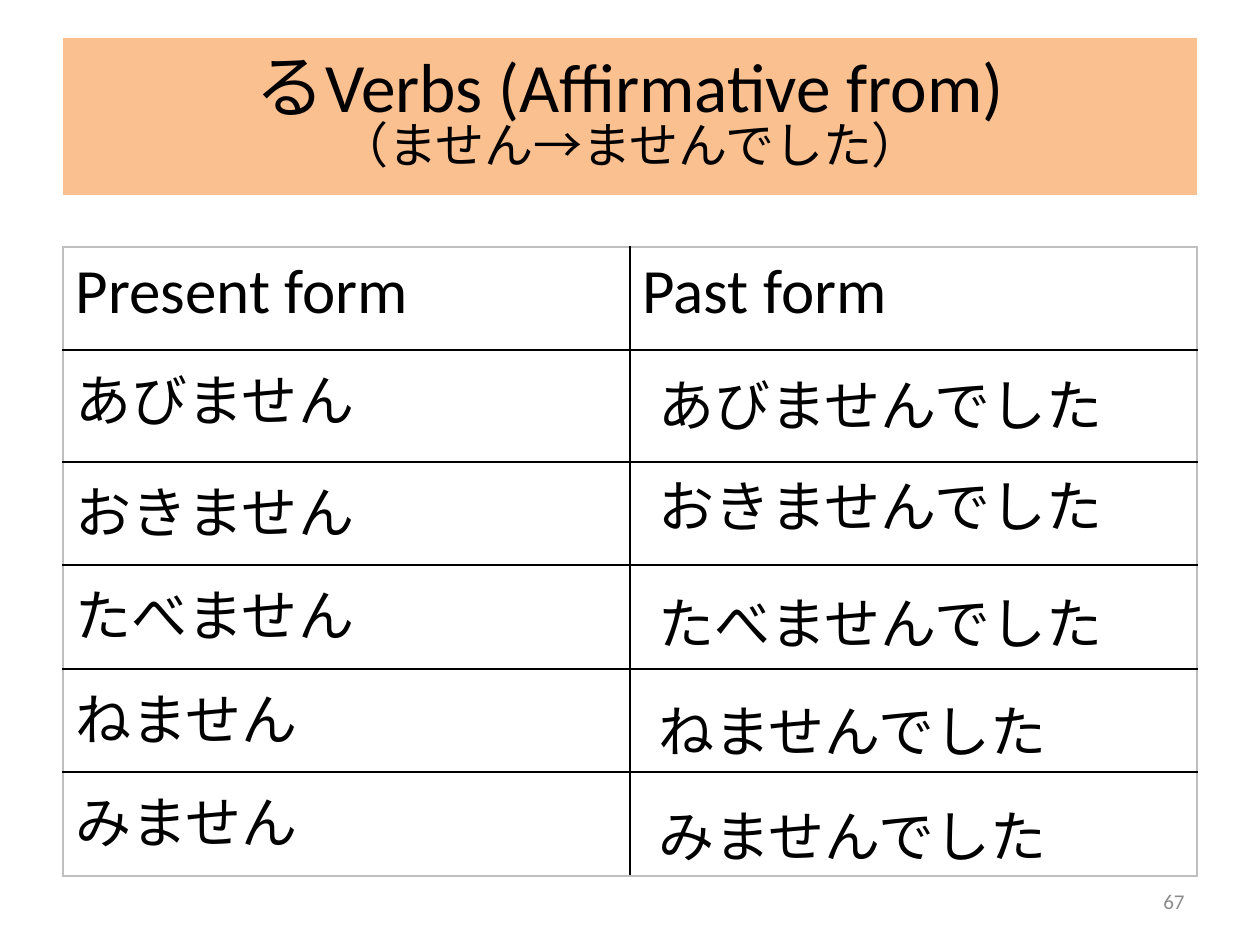
from lxml.etree import SubElement
from pptx import Presentation
from pptx.dml.color import RGBColor
from pptx.enum.text import MSO_ANCHOR as Anchor, MSO_AUTO_SIZE as AutoSize, PP_ALIGN as Align
from pptx.oxml.ns import qn
from pptx.util import Emu, Pt

LATIN, JAPANESE = "Calibri", "Noto Sans CJK JP"
BLACK, GREY, RULE_GREY, PEACH = "000000", "8C8C8C", "BFBFBF", "FAC090"


def px(length):
    return Emu(round(length * 914400 / 126))


def color(hex_code):
    return RGBColor.from_string(hex_code)


class LessonSlide:
    def __init__(self, deck):
        self.slide = deck.slides.add_slide(deck.slide_layouts[5])

    def run(self, paragraph, text, size, font=LATIN, ink=BLACK):
        run = paragraph.add_run()
        run.text = text
        run.font.size = Pt(size)
        run.font.name = font
        run.font.color.rgb = color(ink)
        SubElement(run.font._element, qn("a:ea")).set("typeface", JAPANESE)

    def title(self, box, lines):
        title = self.slide.shapes.title
        title.left, title.top, title.width, title.height = map(px, box)
        title.fill.solid()
        title.fill.fore_color.rgb = color(PEACH)
        frame = title.text_frame
        frame.auto_size = AutoSize.NONE
        frame.vertical_anchor = Anchor.MIDDLE
        heading = frame.paragraphs[0]
        heading.alignment = Align.CENTER
        heading.line_spacing = 0.8
        for index, (text, size) in enumerate(lines):
            if index:
                heading.add_line_break()
            self.run(heading, text, size)

    def text(self, box, text, size, font, ink=BLACK, align=Align.LEFT, anchor=Anchor.TOP):
        frame = self.slide.shapes.add_textbox(*map(px, box)).text_frame
        frame.word_wrap = True
        frame.vertical_anchor = anchor
        frame.paragraphs[0].alignment = align
        self.run(frame.paragraphs[0], text, size, font, ink)

    def border(self, cell, side, ink, width):
        line = SubElement(cell._tc.get_or_add_tcPr(), qn(f"a:{side}"), w=str(Pt(width)))
        fill = SubElement(line, qn("a:solidFill"))
        SubElement(fill, qn("a:srgbClr"), val=ink)

    def table(self, left, top, widths, heights, rows):
        box = map(px, (left, top, sum(widths), sum(heights)))
        table = self.slide.shapes.add_table(len(heights), len(widths), *box).table
        for column, width in zip(table.columns, widths):
            column.width = px(width)
        for r, (height, texts) in enumerate(zip(heights, rows)):
            table.rows[r].height = px(height)
            for c, text in enumerate(texts):
                cell = table.cell(r, c)
                outer = {"lnL": c == 0, "lnR": c == len(widths) - 1,
                         "lnT": r == 0, "lnB": r == len(heights) - 1}
                for side, is_outer in outer.items():
                    self.border(cell, side, RULE_GREY if is_outer else BLACK, 1)
                cell.fill.background()
                if text:
                    size, font = (32, JAPANESE) if r else (36, LATIN)
                    self.run(cell.text_frame.paragraphs[0], text, size, font)


deck = Presentation()
deck.slide_width, deck.slide_height = px(1260), px(945)
lesson = LessonSlide(deck)

# Title band
lesson.title((63, 38, 1134, 157),
             [("るVerbs (Affirmative from)", 39.6), ("（ません→ませんでした）", 28)])

# Page number
lesson.text((903, 876, 294, 50), "67", 12, LATIN, GREY, Align.RIGHT, Anchor.MIDDLE)

# Present forms in the table
stems = ["あび", "おき", "たべ", "ね", "み"]
lesson.table(63, 247, [567, 567], [103, 112, 103, 104, 103, 104],
             [("Present form", "Past form")] + [(stem + "ません", "") for stem in stems])

# Past forms laid over the right column
for stem, top in zip(stems, [364, 465, 582, 690, 795]):
    lesson.text((646, top, 551, 81), stem + "ませんでした", 32, JAPANESE)

deck.save("out.pptx")
